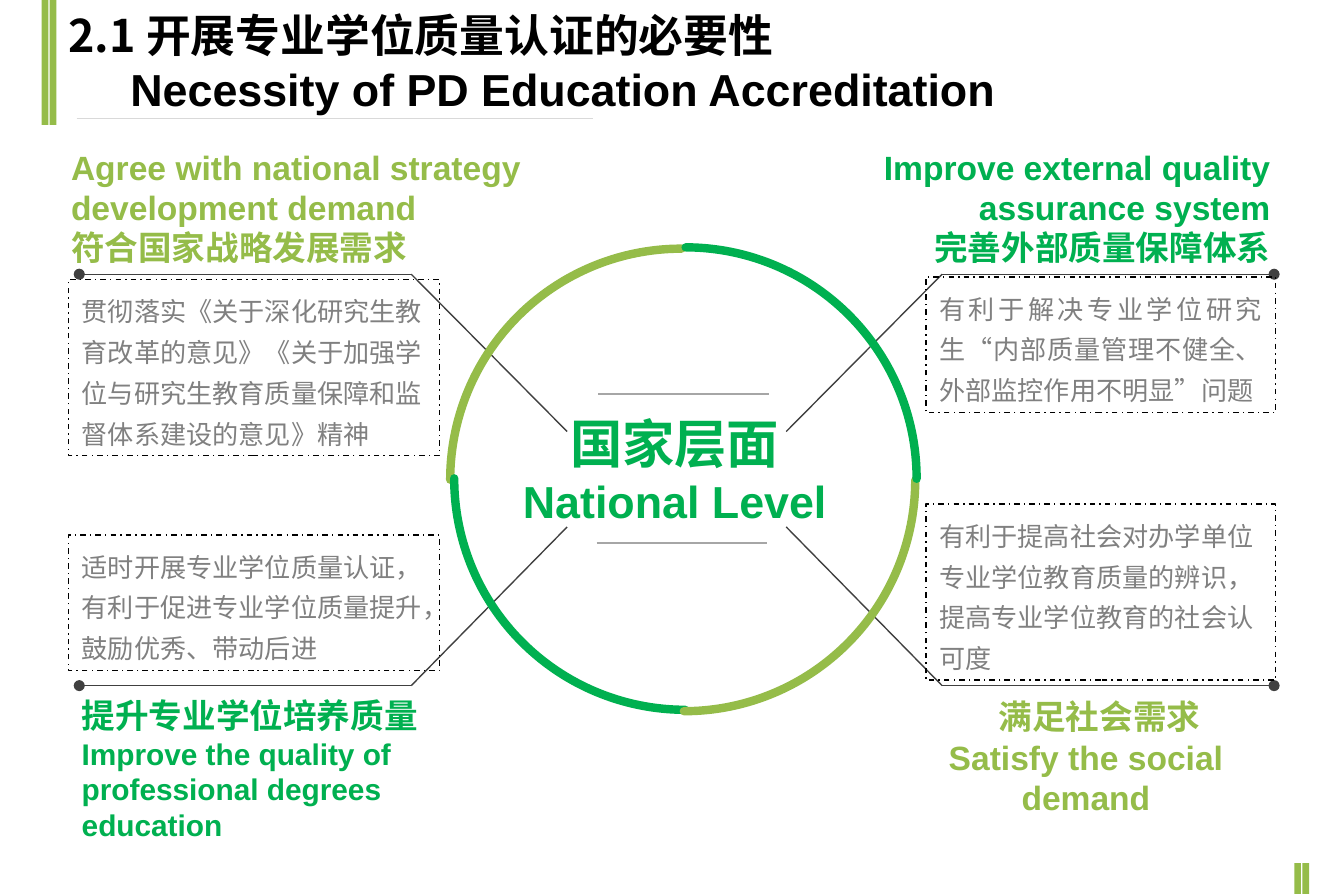
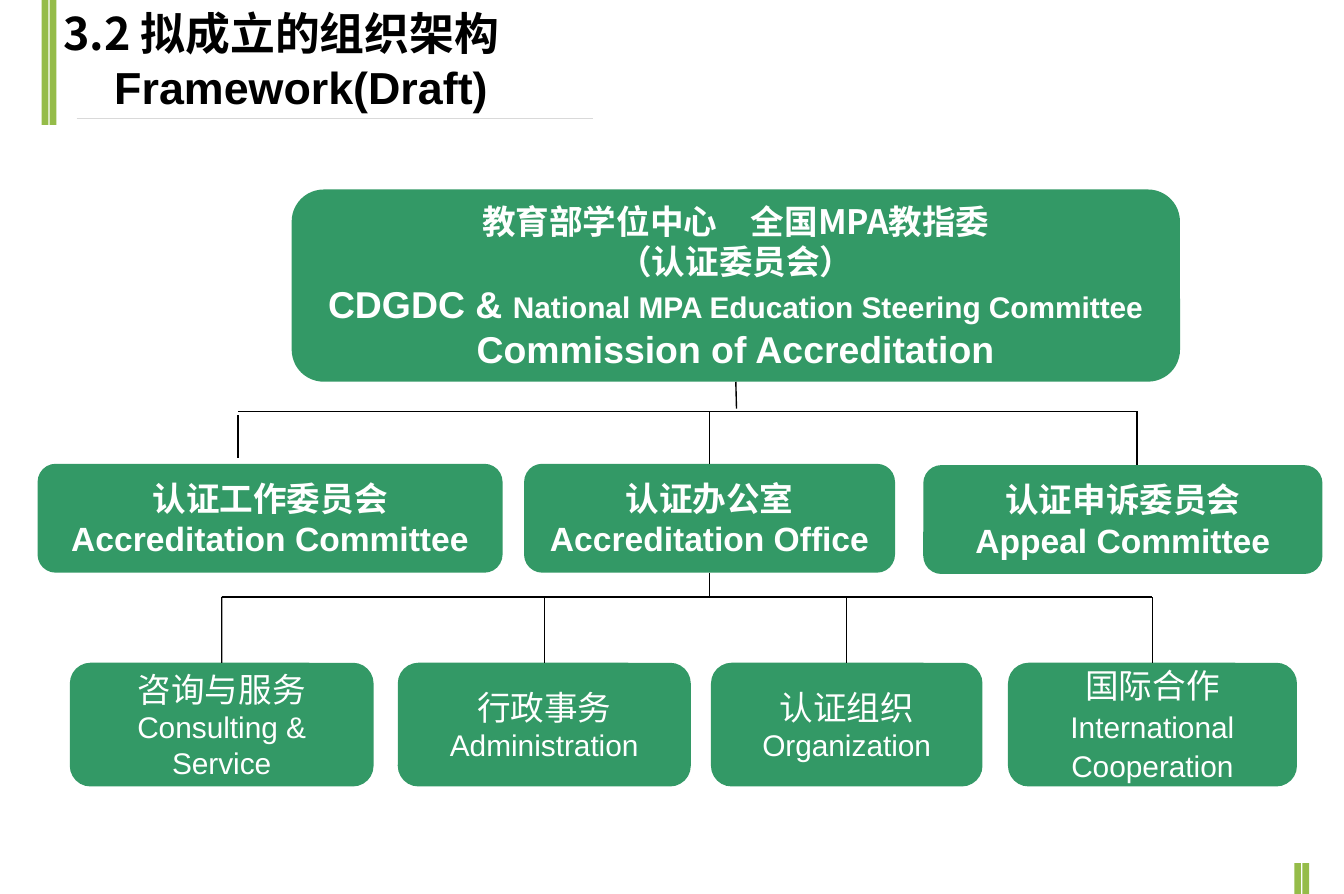
from lxml import etree
from pptx import Presentation
from pptx import util as u
from pptx.dml.color import RGBColor
from pptx.enum import dml, shapes, text
from pptx.oxml import ns

LATIN, CJK = "Arial", "Noto Sans CJK SC"
COLORS = {
    "lime": "95BC49", "green": "00B050", "box": "339966", "body": "808080",
    "ink": "000000", "white": "FFFFFF", "branch": "404040",
    "center_rule": "A6A6A6", "title_rule": "D9D9D9",
}
ALIGN = text.PP_ALIGN


def para(*runs, indent=0, **formats):
    return runs, indent, formats


def rgb(name):
    return RGBColor.from_string(COLORS[name])


def apply(target, formats):
    for key, value in formats.items():
        setattr(target, key, value)


class Deck:
    def __init__(self):
        self.prs = Presentation()
        self.prs.slide_width, self.prs.slide_height = u.Inches(10), u.Inches(6.65)
        self.slide = None

    def new_slide(self, number_and_topic, english, at, indent):
        self.slide = self.prs.slides.add_slide(self.prs.slide_layouts[6])
        for left, top, height in ((0.31, 0, 0.93), (9.63, 6.42, 0.23)):
            for offset in (0, 0.06):
                self.shape(shapes.MSO_SHAPE.RECTANGLE, (left + offset, top, 0.05, height), fill="lime")
        self.line((0.57, 0.88), (4.41, 0.88), "title_rule")
        title = [para((number_and_topic, 24, CJK)), para((english, 24, LATIN), indent=indent)]
        self.label(at, title, "ink", insets=(0.08, 0.04))

    def set_text(self, frame, paragraphs, color, bold=False, align=None, **formats):
        apply(frame, {"word_wrap": True, "vertical_anchor": text.MSO_ANCHOR.TOP, **formats})
        for index, (runs, indent, paragraph_formats) in enumerate(paragraphs):
            paragraph = frame.add_paragraph() if index else frame.paragraphs[0]
            apply(paragraph, {"alignment": align, **paragraph_formats})
            if indent:
                paragraph._p.get_or_add_pPr().set("marL", str(u.Inches(indent)))
            for words, size, face in runs:
                run = paragraph.add_run()
                run.text = words
                apply(run.font, {"size": u.Pt(size), "bold": bold, "name": face})
                run.font.color.rgb = rgb(color)
                etree.SubElement(run._r.get_or_add_rPr(), ns.qn("a:ea"), typeface=CJK)

    def label(self, at, paragraphs, color, insets=(0.1, 0.05), **formats):
        frame = self.slide.shapes.add_textbox(*map(u.Inches, at)).text_frame
        across, down = map(u.Inches, insets)
        margins = {"margin_left": across, "margin_right": across,
                   "margin_top": down, "margin_bottom": down}
        self.set_text(frame, paragraphs, color, bold=True,
                      auto_size=text.MSO_AUTO_SIZE.SHAPE_TO_FIT_TEXT, **margins, **formats)

    def shape(self, kind, at, fill=None, line=None, width=0.75):
        shape = self.slide.shapes.add_shape(kind, *map(u.Inches, at))
        shape.shadow.inherit = False
        for part, color in ((shape.fill, fill), (shape.line.fill, line)):
            if color:
                part.solid()
                part.fore_color.rgb = rgb(color)
            else:
                part.background()
        if line:
            shape.line.width = u.Pt(width)
        return shape

    def detail(self, at, words, align=ALIGN.LEFT):
        box = self.shape(shapes.MSO_SHAPE.RECTANGLE, at, line="ink")
        box.line.dash_style = dml.MSO_LINE.DASH_DOT
        paragraph = para((words, 14, LATIN), line_spacing=1.3, space_before=u.Pt(6))
        self.set_text(box.text_frame, [paragraph], "body", align=align)

    def unit(self, at, paragraphs, bold=True):
        box = self.shape(shapes.MSO_SHAPE.ROUNDED_RECTANGLE, at, fill="box")
        self.set_text(box.text_frame, paragraphs, "white", bold, ALIGN.CENTER,
                      vertical_anchor=text.MSO_ANCHOR.MIDDLE)
        return box

    def arc(self, at, rotation, color):
        arc = self.shape(shapes.MSO_SHAPE.ARC, at, line=color, width=4.5)
        arc.adjustments[0], arc.adjustments[1] = 108.03, 162.03
        arc.rotation = rotation
        arc._element.spPr.find(ns.qn("a:ln")).set("cap", "rnd")

    def line(self, start, end, color, dot=False, begin=None):
        line = self.slide.shapes.add_connector(
            shapes.MSO_CONNECTOR.STRAIGHT, *map(u.Inches, (*start, *end)))
        line.line.color.rgb = rgb(color)
        line.line.width = u.Pt(0.75)
        properties = line._element.spPr
        if dot:
            etree.SubElement(properties.find(ns.qn("a:ln")), ns.qn("a:headEnd"), type="oval")
        etree.SubElement(properties, ns.qn("a:effectLst"))
        if begin:
            line.begin_connect(*begin)


def necessity(deck):
    deck.new_slide("2.1 开展专业学位质量认证的必要性", "Necessity of PD Education Accreditation",
                   (0.43, 0.02, 7.49, 0.89), 0.46)
    for left, y in ((4.45, 2.93), (4.44, 4.04)):
        deck.line((left, y), (left + 1.27, y), "center_rule")
    for dot_x, elbow_x, tip_x in ((0.59, 3.06, 4.22), (9.48, 7.01, 5.85)):
        for y, tip_y in ((2.04, 3.21), (5.1, 3.92)):
            deck.line((dot_x, y), (elbow_x, y), "branch", dot=True)
            deck.line((elbow_x, y), (tip_x, tip_y), "branch")

    deck.label((0.43, 1.04, 3.79, 1.01), [
        para(("Agree with national strategy development demand", 18, LATIN)),
        para(("符合国家战略发展需求", 18, CJK))], "lime")
    deck.label((0.51, 5.12, 2.83, 1.21), [
        para(("提升专业学位培养质量", 18, CJK)),
        para(("Improve the quality of professional degrees education", 16, LATIN))], "green")
    deck.label((6.26, 1.04, 3.29, 1.01), [
        para(("Improve external quality assurance system", 18, LATIN)),
        para(("完善外部质量保障体系", 18, CJK))], "green", align=ALIGN.RIGHT)
    deck.label((6.67, 5.13, 2.82, 1.01), [
        para(("满足社会需求", 18, CJK), indent=0.2),
        para(("Satisfy the social demand", 18, LATIN))], "lime", align=ALIGN.CENTER)

    deck.detail((0.51, 2.08, 2.76, 1.31),
                "贯彻落实《关于深化研究生教育改革的意见》《关于加强学位与研究生教育质量保障和监督体系建设的意见》精神")
    deck.detail((0.51, 3.98, 2.76, 1.01),
                "适时开展专业学位质量认证，有利于促进专业学位质量提升，鼓励优秀、带动后进")
    deck.detail((6.89, 2.06, 2.6, 1.01),
                "有利于解决专业学位研究生“内部质量管理不健全、外部监控作用不明显”问题", ALIGN.JUSTIFY)
    deck.detail((6.89, 3.75, 2.6, 1.31),
                "有利于提高社会对办学单位专业学位教育质量的辨识，提高专业学位教育的社会认可度")

    deck.label((3.78, 3.01, 2.48, 1.45), [
        para(("国家层面", 28, LATIN)), para(("National Level", 24, LATIN))],
        "green", align=ALIGN.CENTER, word_wrap=False)
    for left, top, rotation, color in ((3.35, 1.85, 0, "lime"), (3.38, 1.84, 270, "green"),
                                       (3.37, 1.85, 180, "lime"), (3.38, 1.84, 90, "green")):
        deck.arc((left, top, 3.44, 3.44), rotation, color)


def framework(deck):
    deck.new_slide("3.2 拟成立的组织架构", "Framework(Draft)", (0.39, 0, 9.72, 0.89), 0.38)
    commission = deck.unit((2.17, 1.41, 6.61, 1.43), [
        para(("教育部学位中心　全国MPA教指委", 18, CJK)),
        para(("（认证委员会）", 18, CJK)),
        para(("CDGDC & ", 20, LATIN), ("National MPA Education Steering Committee", 16, LATIN)),
        para(("Commission of Accreditation", 20, LATIN))])
    _, office, _ = [
        deck.unit((left, top, width, 0.81), [para((chinese, 18, CJK)), para((english, 18, LATIN))])
        for left, top, width, chinese, english in (
            (0.28, 3.45, 3.46, "认证工作委员会", "Accreditation Committee"),
            (3.9, 3.45, 2.76, "认证办公室", "Accreditation Office"),
            (6.87, 3.46, 2.97, "认证申诉委员会", "Appeal Committee"))]

    upper_bar, lower_bar, leaf_top = 3.06, 4.44, 4.93
    deck.line((1.77, upper_bar), (8.46, upper_bar), "ink")
    deck.line((1.77, 3.09), (1.77, 3.41), "ink")
    deck.line((8.46, upper_bar), (8.46, 3.46), "ink")
    deck.line((5.48, 2.84), (5.48, 3.04), "ink", begin=(commission, 2))
    deck.line((5.28, 3.45), (5.28, upper_bar), "ink", begin=(office, 0))
    deck.line((5.28, 4.26), (5.28, lower_bar), "ink", begin=(office, 2))
    deck.line((1.65, lower_bar), (8.57, lower_bar), "ink")

    for left, width, chinese, english, spacing in (
            (0.52, 2.26, "咨询与服务", "Consulting & Service", None),
            (2.96, 2.18, "行政事务", "Administration", None),
            (5.29, 2.02, "认证组织", "Organization", None),
            (7.5, 2.15, "国际合作", "International Cooperation", u.Pt(21))):
        leaf = deck.unit((left, leaf_top, width, 0.92), [
            para((chinese, 18, CJK)), para((english, 16, LATIN), line_spacing=spacing)], bold=False)
        center = left + width / 2
        deck.line((center, leaf_top), (center, lower_bar), "ink", begin=(leaf, 0))


def main():
    deck = Deck()
    necessity(deck)
    framework(deck)
    deck.prs.save("out.pptx")


if __name__ == "__main__":
    main()
